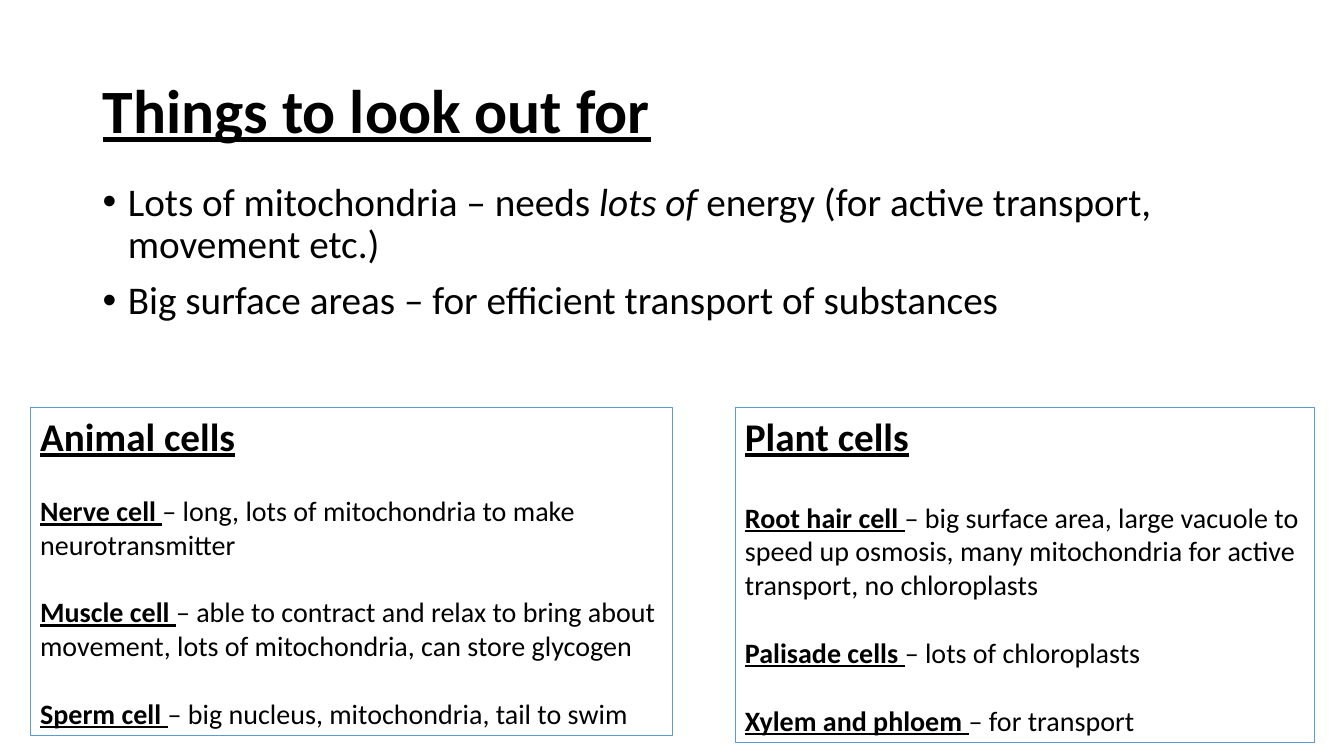
from lxml import etree
from pptx import Presentation
from pptx.dml.color import RGBColor
from pptx.enum.shapes import MSO_SHAPE
from pptx.enum.text import MSO_ANCHOR, MSO_AUTO_SIZE, PP_ALIGN
from pptx.oxml.ns import qn
from pptx.util import Inches, Pt

RECTANGLE = MSO_SHAPE.RECTANGLE
TOP, MIDDLE = MSO_ANCHOR.TOP, MSO_ANCHOR.MIDDLE
LEFT = PP_ALIGN.LEFT
NO_FIT = MSO_AUTO_SIZE.NONE

TITLE_ONLY = 5
FONT = "Calibri"
BLACK, BLUE = "000000", "5B9BD5"
HEADING = {"bold": True, "underline": True}
LINE_RATIO = 1.22  # height of one Calibri line per point of size

CLUES = [
    [("Lots of mitochondria – needs ", {}),
     ("lots of", {"italic": True}),
     (" energy (for active transport, movement etc.)", {})],
    [("Big surface areas – for efficient transport of substances", {})],
]

# heading, place, size of the gap line under the heading, cells
CELL_GROUPS = [
    ("Animal cells", (0.3, 4.04, 6.37, 3.26), 20, [
        ("Nerve cell ", "– long, lots of mitochondria to make neurotransmitter"),
        ("Muscle cell ", "– able to contract and relax to bring about movement, "
                         "lots of mitochondria, can store glycogen"),
        ("Sperm cell ", "– big nucleus, mitochondria, tail to swim"),
    ]),
    ("Plant cells", (7.29, 4.04, 5.75, 3.33), 24, [
        ("Root hair cell ", "– big surface area, large vacuole to speed up osmosis, "
                            "many mitochondria for active transport, no chloroplasts"),
        ("Palisade cells ", "– lots of chloroplasts"),
        ("Xylem and phloem ", "– for transport"),
    ]),
]


def color(hex_code):
    return RGBColor.from_string(hex_code)


def add_run(paragraph, text, size, style):
    run = paragraph.add_run()
    run.text = text
    run.font.color.rgb = color(BLACK)
    for name, value in {"name": FONT, "size": Pt(size), **style}.items():
        setattr(run.font, name, value)


def prepare_frame(frame, anchor):
    settings = {"word_wrap": True, "auto_size": NO_FIT, "vertical_anchor": anchor}
    for name, value in settings.items():
        setattr(frame, name, value)


def add_paragraph(frame, is_first, runs, size, **spacing):
    paragraph = frame.paragraphs[0] if is_first else frame.add_paragraph()
    for name, value in {"alignment": LEFT, **spacing}.items():
        setattr(paragraph, name, value)
    for text, style in runs:
        add_run(paragraph, text, size, style)
    return paragraph


def add_bullet(paragraph):
    properties = paragraph._p.get_or_add_pPr()
    properties.set("marL", str(Inches(0.25)))
    properties.set("indent", str(-Inches(0.25)))
    etree.SubElement(properties, qn("a:buFont")).set("typeface", "Arial")
    etree.SubElement(properties, qn("a:buChar")).set("char", "•")


def place_title(slide, text):
    title = slide.shapes.title
    place = {"left": 0.92, "top": 0.4, "width": 11.5, "height": 1.45}
    for name, value in place.items():
        setattr(title, name, Inches(value))
    prepare_frame(title.text_frame, MIDDLE)
    add_paragraph(title.text_frame, True, [(text, HEADING)], 44, line_spacing=0.9)


def add_clues(slide):
    clues = slide.shapes.add_textbox(*map(Inches, (0.92, 1.76, 11.5, 2.62)))
    prepare_frame(clues.text_frame, TOP)
    for index, runs in enumerate(CLUES):
        add_bullet(add_paragraph(clues.text_frame, index == 0, runs, 28,
                                 line_spacing=0.9, space_before=Pt(10)))


def add_cell_group(slide, heading, place, first_gap, cells):
    box = slide.shapes.add_shape(RECTANGLE, *map(Inches, place))
    box.shadow.inherit = False
    box.fill.background()
    box.line.color.rgb = color(BLUE)
    box.line.width = Pt(0.75)
    prepare_frame(box.text_frame, TOP)
    add_paragraph(box.text_frame, True, [(heading, HEADING)], 28)
    for index, (cell, features) in enumerate(cells):
        gap = first_gap if index == 0 else 20
        add_paragraph(box.text_frame, False, [(cell, HEADING), (features, {})], 20,
                      space_before=Pt(gap * LINE_RATIO))


def main():
    presentation = Presentation()
    presentation.slide_width = Inches(13.33)
    presentation.slide_height = Inches(7.5)
    slide = presentation.slides.add_slide(presentation.slide_layouts[TITLE_ONLY])

    # Title and general clues
    place_title(slide, "Things to look out for")
    add_clues(slide)

    # Boxes of specialised cells
    for group in CELL_GROUPS:
        add_cell_group(slide, *group)

    presentation.save("out.pptx")


if __name__ == "__main__":
    main()
